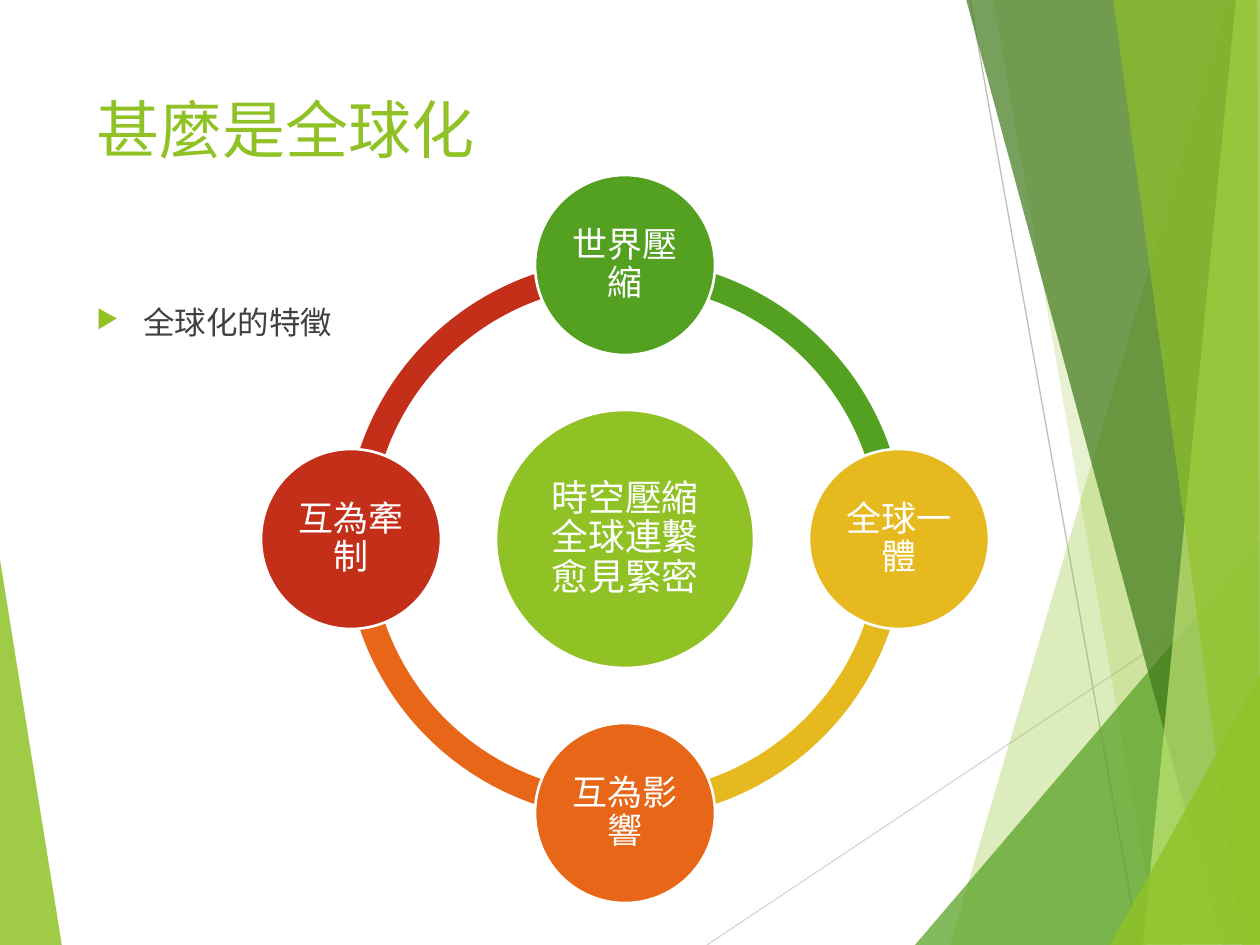
from lxml import etree
from pptx import Presentation
from pptx.dml.color import RGBColor
from pptx.enum.shapes import MSO_CONNECTOR, MSO_SHAPE
from pptx.enum.text import MSO_ANCHOR, PP_ALIGN
from pptx.oxml.ns import qn
from pptx.util import Pt

LINE = MSO_CONNECTOR.STRAIGHT
ARC, CIRCLE = MSO_SHAPE.BLOCK_ARC, MSO_SHAPE.OVAL
TOP, MIDDLE = MSO_ANCHOR.TOP, MSO_ANCHOR.MIDDLE
LEFT, CENTER = PP_ALIGN.LEFT, PP_ALIGN.CENTER

WHITE = RGBColor(0xFF, 0xFF, 0xFF)
LIME = RGBColor(0x90, 0xC2, 0x26)
PALE_LIME = RGBColor(0xC0, 0xE4, 0x74)
GREEN = RGBColor(0x54, 0xA0, 0x21)
DARK_GREEN = RGBColor(0x3F, 0x78, 0x19)
YELLOW = RGBColor(0xE6, 0xB9, 0x1E)
ORANGE = RGBColor(0xE7, 0x66, 0x18)
RED = RGBColor(0xC4, 0x2F, 0x1A)
CHARCOAL = RGBColor(0x40, 0x40, 0x40)
SILVER = RGBColor(0xBF, 0xBF, 0xBF)
LIGHT_GRAY = RGBColor(0xD9, 0xD9, 0xD9)

EMU_PER_PX = 914400 / 126
WIDTH, HEIGHT = 1260, 945
ARC_UNITS_PER_DEGREE = 0.6


def px(length):
    return round(length * EMU_PER_PX)


def apply(target, values):
    for name, value in values.items():
        setattr(target, name, value)


class SlideBuilder:
    font = "Lato"
    circle_frame = {
        "word_wrap": True, "vertical_anchor": MIDDLE,
        "margin_left": px(4), "margin_right": px(4),
        "margin_top": px(4), "margin_bottom": px(4),
    }
    circle_paragraph = {"alignment": CENTER, "line_spacing": 0.9}

    def __init__(self, slide):
        self.slide = slide

    def paint(self, shape, color, alpha=100):
        shape.shadow.inherit = False
        shape.fill.solid()
        shape.fill.fore_color.rgb = color
        shape.line.fill.background()
        if alpha < 100:
            tint = shape._element.spPr.find(f"{qn('a:solidFill')}/{qn('a:srgbClr')}")
            etree.SubElement(tint, qn("a:alpha"), val=str(alpha * 1000))

    def set_text(self, frame, text, size, color, frame_format, paragraph_format):
        apply(frame, frame_format)
        paragraph = frame.paragraphs[0]
        apply(paragraph, paragraph_format)
        run = paragraph.add_run()
        run.text = text
        apply(run.font, {"name": self.font, "size": Pt(size)})
        run.font.color.rgb = color
        return paragraph

    def title(self, text, left, top, width, height):
        title = self.slide.shapes.title
        apply(title, {"left": px(left), "top": px(top), "width": px(width), "height": px(height)})
        self.set_text(title.text_frame, text, 36, LIME,
                      {"word_wrap": True, "vertical_anchor": TOP}, {"alignment": LEFT})

    def bullet(self, text, left, top, width, height):
        box = self.slide.shapes.add_textbox(px(left), px(top), px(width), px(height))
        paragraph = self.set_text(box.text_frame, text, 18, CHARCOAL,
                                  {"word_wrap": True, "vertical_anchor": TOP},
                                  {"alignment": LEFT, "space_before": Pt(10)})
        props = paragraph._p.get_or_add_pPr()
        props.set("marL", str(px(47)))
        props.set("indent", str(px(-47)))
        bullet_color = etree.SubElement(props, qn("a:buClr"))
        etree.SubElement(bullet_color, qn("a:srgbClr"), val=str(LIME))
        etree.SubElement(props, qn("a:buSzPct"), val="80000")
        etree.SubElement(props, qn("a:buChar"), char="▶")

    def facet(self, points, color, alpha):
        start, *rest = [(px(x), px(y)) for x, y in points]
        outline = self.slide.shapes.build_freeform(*start)
        outline.add_line_segments(rest, close=True)
        self.paint(outline.convert_to_shape(), color, alpha)

    def line(self, start, end, color):
        line = self.slide.shapes.add_connector(LINE, *map(px, (*start, *end)))
        line.line.color.rgb = color
        line.line.width = Pt(0.75)
        etree.SubElement(line._element.spPr, qn("a:effectLst"))

    def centered(self, preset, x, y, diameter, color):
        corner = px(x - diameter / 2), px(y - diameter / 2)
        shape = self.slide.shapes.add_shape(preset, *corner, px(diameter), px(diameter))
        self.paint(shape, color)
        return shape

    def arc(self, x, y, diameter, start, color):
        arc = self.centered(ARC, x, y, diameter, color)
        end = (start + 90) % 360
        for index, value in enumerate((start * ARC_UNITS_PER_DEGREE, end * ARC_UNITS_PER_DEGREE, 0.046)):
            arc.adjustments[index] = value

    def circle(self, text, x, y, diameter, size, color):
        circle = self.centered(CIRCLE, x, y, diameter, color)
        circle.line.color.rgb = WHITE
        circle.line.width = Pt(1.5)
        self.set_text(circle.text_frame, text, size, WHITE, self.circle_frame, self.circle_paragraph)


LEFT_FACET = ([(-1, 553), (62, 946), (-1, 945)], LIME, 85)
RIGHT_FACETS = [
    ([(1228, 0), (950, 945), (1262, 946), (1261, 1)], LIME, 30),
    ([(993, -1), (1158, 945), (1261, 945), (1261, -1)], LIME, 20),
    ([(915, 945), (1260, 541), (1261, 945)], GREEN, 72),
    ([(966, -1), (1222, 945), (1261, 944), (1261, -1)], DARK_GREEN, 70),
    ([(1236, -1), (1143, 945), (1261, 945), (1260, -1)], PALE_LIME, 70),
    ([(1113, -1), (1242, 945), (1260, 945), (1257, -1)], LIME, 65),
    ([(1110, 945), (1261, 674), (1261, 944)], LIME, 80),
]
HUB_X, HUB_Y = 625, 539
RING, HUB, NODE, ORBIT = 560, 258, 180, 274
FEATURES = [
    ("世界壓縮", 0, -1, 270, GREEN),
    ("全球一體", 1, 0, 0, YELLOW),
    ("互為影響", 0, 1, 90, ORANGE),
    ("互為牽制", -1, 0, 180, RED),
]


def main():
    deck = Presentation()
    apply(deck, {"slide_width": px(WIDTH), "slide_height": px(HEIGHT)})
    builder = SlideBuilder(deck.slides.add_slide(deck.slide_layouts[5]))

    builder.facet(*LEFT_FACET)
    builder.line((707, 945), (1261, 576), LIGHT_GRAY)
    builder.line((970, 0), (1139, 945), SILVER)
    for facet in RIGHT_FACETS:
        builder.facet(*facet)

    builder.title("甚麼是全球化", 84, 84, 874, 181)
    builder.bullet("全球化的特徵", 84, 297, 874, 534)

    for _, _, _, start, color in reversed(FEATURES):
        builder.arc(HUB_X, HUB_Y, RING, start, color)
    builder.circle("時空壓縮全球連繫愈見緊密", HUB_X, HUB_Y, HUB, 21, LIME)
    for text, dx, dy, _, color in FEATURES:
        builder.circle(text, HUB_X + dx * ORBIT, HUB_Y + dy * ORBIT, NODE, 20, color)

    deck.save("out.pptx")


if __name__ == "__main__":
    main()
